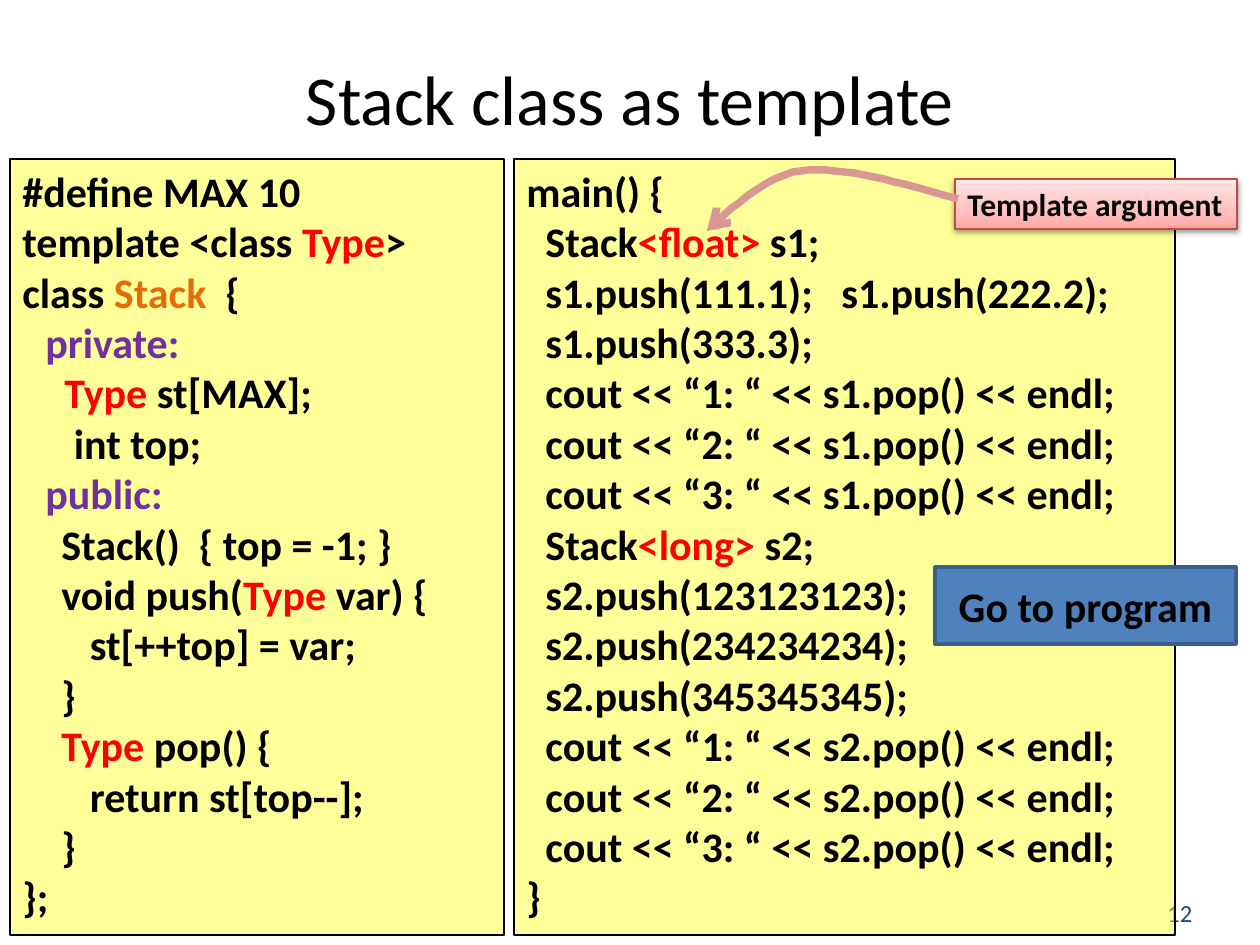
from lxml import etree
from pptx import Presentation
from pptx.dml.color import RGBColor
from pptx.enum.shapes import MSO_SHAPE
from pptx.enum.text import MSO_ANCHOR, PP_ALIGN
from pptx.oxml import parse_xml
from pptx.oxml.ns import nsdecls, qn
from pptx.util import Pt

PX = 914400 / 126
RECTANGLE = MSO_SHAPE.RECTANGLE
TOP, MIDDLE = MSO_ANCHOR.TOP, MSO_ANCHOR.MIDDLE
LEFT, CENTER = PP_ALIGN.LEFT, PP_ALIGN.CENTER
BLACK, RED, ORANGE, PURPLE = "000000", "FF0000", "E46C0A", "7030A0"
MEMBER, BODY = 23, 39  # indents in px


def rgb(value):
    return RGBColor.from_string(value)


def add_box(box, lines, size, bold=True, align=LEFT, anchor=TOP, wrap=True, line=None):
    """Add a rectangle; each line is (indent, (text, colour), ...)."""
    shape = slide.shapes.add_shape(RECTANGLE, *(round(v * PX) for v in box))
    shape.shadow.inherit = False
    shape.fill.background()
    if line:
        shape.line.color.rgb = rgb(line[0])
        shape.line.width = Pt(line[1])
    else:
        shape.line.fill.background()
    frame = shape.text_frame
    frame.word_wrap, frame.vertical_anchor = wrap, anchor
    for number, (indent, *runs) in enumerate(lines):
        paragraph = frame.add_paragraph() if number else frame.paragraphs[0]
        paragraph.alignment = align
        if indent:
            paragraph._p.get_or_add_pPr().set("marL", str(round(indent * PX)))
        for text, colour in runs:
            run = paragraph.add_run()
            run.text = text
            run.font.color.rgb = rgb(colour)
            for name, value in {"name": "Calibri", "size": Pt(size), "bold": bold}.items():
                setattr(run.font, name, value)
    return shape


presentation = Presentation()
presentation.slide_width = round(1260 * PX)
presentation.slide_height = round(945 * PX)
slide = presentation.slides.add_slide(presentation.slide_layouts[6])

add_box((1155, 892, 84, 42), [(0, ("12", "1F497D"))], 14, bold=False, anchor=MIDDLE)
add_box((63, 48, 1134, 98), [(0, ("Stack class as template", BLACK))], 40,
        bold=False, align=CENTER, anchor=MIDDLE)

# Code panels
class_code = [
    (0, ("#define MAX 10", BLACK)),
    (0, ("template <class ", BLACK), ("Type", RED), (">", BLACK)),
    (0, ("class ", BLACK), ("Stack", ORANGE), ("  {", BLACK)),
    (MEMBER, ("private:", PURPLE)),
    (MEMBER, ("  ", BLACK), ("Type ", RED), ("st[MAX];", BLACK)),
    (MEMBER, ("   int top;", BLACK)),
    (MEMBER, ("public:", PURPLE)),
    (BODY, ("Stack()  { top = -1; }", BLACK)),
    (BODY, ("void push(", BLACK), ("Type ", RED), ("var) {", BLACK)),
    (BODY, ("   st[++top] = var;", BLACK)),
    (BODY, ("}", BLACK)),
    (BODY, ("Type", RED), (" pop() {", BLACK)),
    (BODY, ("   return st[top--];", BLACK)),
    (BODY, ("}", BLACK)),
    (0, ("};", BLACK)),
]
main_code = [(0, ("main() {", BLACK))]
for stack, kind, pushes in (
    ("s1", "<float>", ["  s1.push(111.1);   s1.push(222.2);", "  s1.push(333.3);"]),
    ("s2", "<long>", [f"  s2.push({value});" for value in (123123123, 234234234, 345345345)]),
):
    pops = [f"  cout << “{n}: “ << {stack}.pop() << endl;" for n in (1, 2, 3)]
    main_code.append((0, ("  Stack", BLACK), (kind, RED), (f" {stack};", BLACK)))
    main_code += [(0, (text, BLACK)) for text in pushes + pops]
main_code.append((0, ("}", BLACK)))

for left, width, code in ((10, 494, class_code), (514, 661, main_code)):
    panel = add_box((left, 159, width, 776), code, 24, line=(BLACK, 0.75))
    panel.fill.solid()
    panel.fill.fore_color.rgb = rgb("FFFF00")
    colour = panel._element.spPr.find(qn("a:solidFill")).find(qn("a:srgbClr"))
    etree.SubElement(colour, qn("a:alpha")).set("val", "40000")

# Label with gradient and soft shadow
label = add_box((955, 179, 282, 50), [(0, ("Template argument", BLACK))], 18,
                wrap=False, line=("BF4C48", 0.75))
stops = "".join(
    f'<a:gs pos="{position * 1000}"><a:srgbClr val="{value}"/></a:gs>'
    for position, value in ((0, "FFA6A5"), (35, "FFC0BF"), (100, "FFE7E7"))
)
gradient = parse_xml(f'<a:gradFill {nsdecls("a")} rotWithShape="1"><a:gsLst>{stops}</a:gsLst>'
                     '<a:lin ang="16200000" scaled="0"/></a:gradFill>')
properties = label._element.spPr
properties.replace(properties.find(qn("a:noFill")), gradient)
properties.find(qn("a:effectLst")).append(parse_xml(
    f'<a:outerShdw {nsdecls("a")} blurRad="{Pt(3.1)}" dist="{Pt(1.6)}" dir="5400000" '
    'rotWithShape="0"><a:srgbClr val="000000"><a:alpha val="38000"/></a:srgbClr></a:outerShdw>'))

# Curved arrow from the label to <float>, sampled from two Bezier curves
STEPS = 16
curves = [((958, 199), (900, 183), (843, 165), (801, 171)),
          ((801, 171), (760, 176), (707, 231), (707, 231))]
points = []
for curve in curves:
    for step in range(1, STEPS + 1):
        t = step / STEPS
        weights = ((1 - t) ** 3, 3 * t * (1 - t) ** 2, 3 * t * t * (1 - t), t ** 3)
        points.append(tuple(sum(w * p[axis] for w, p in zip(weights, curve)) for axis in (0, 1)))
builder = slide.shapes.build_freeform(*curves[0][0], scale=PX)
builder.add_line_segments(points, close=False)
arrow = builder.convert_to_shape()
arrow.shadow.inherit = False
arrow.fill.background()
arrow.line.color.rgb = rgb("D99694")
arrow.line.width = Pt(4.25)
etree.SubElement(arrow._element.spPr.find(qn("a:ln")), qn("a:tailEnd")).set("type", "arrow")

button = add_box((935, 567, 301, 77), [(0, ("Go to program", BLACK))], 24,
                 align=CENTER, anchor=MIDDLE, line=("3A5F8C", 2))
button.fill.solid()
button.fill.fore_color.rgb = rgb("4F81BD")

presentation.save("out.pptx")
